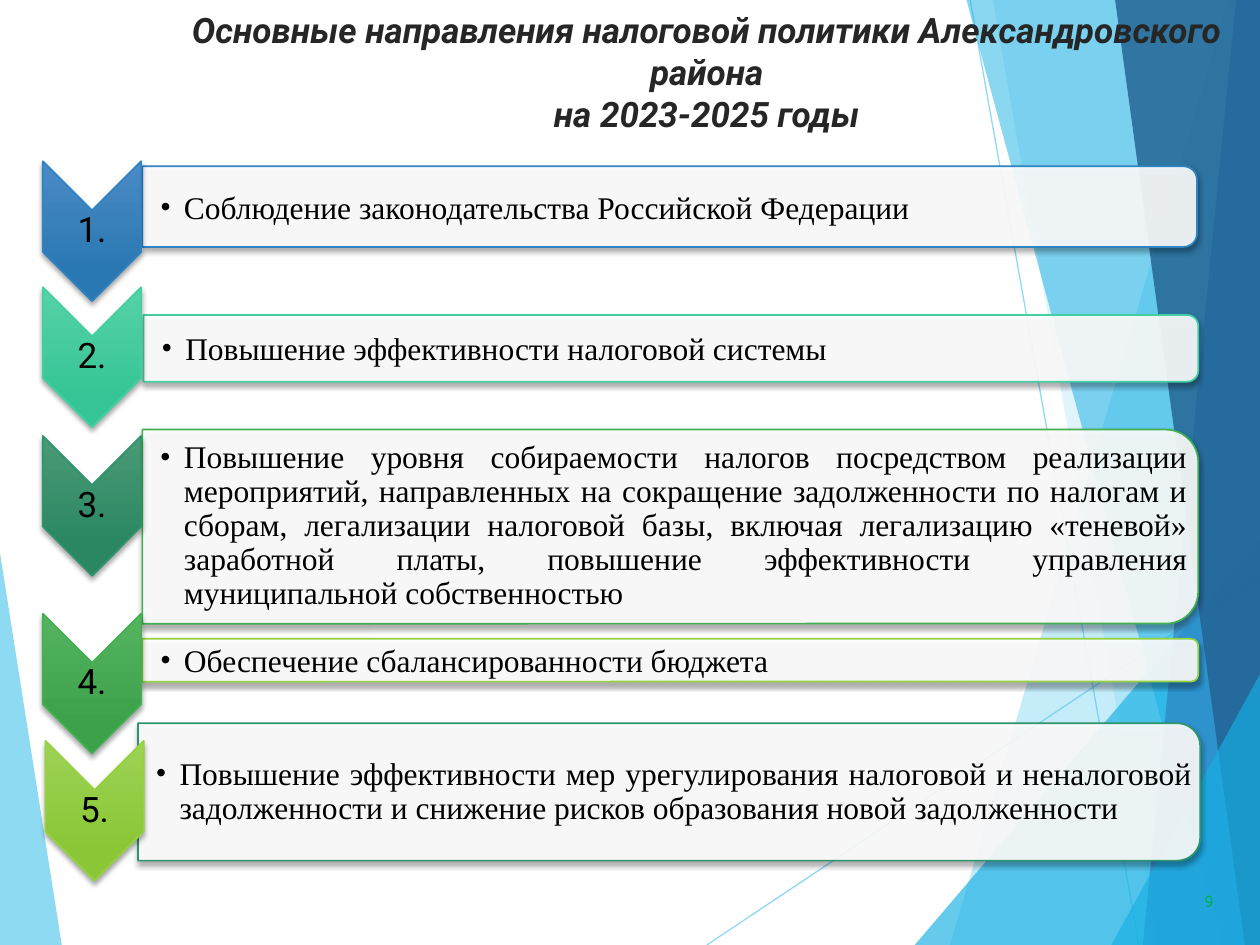
from dataclasses import dataclass
from typing import NamedTuple

from lxml import etree
from pptx import Presentation
from pptx.dml.color import RGBColor
from pptx.enum.shapes import MSO_CONNECTOR, MSO_SHAPE
from pptx.enum.text import MSO_ANCHOR, MSO_AUTO_SIZE, PP_ALIGN
from pptx.oxml.ns import qn
from pptx.util import Emu, Inches, Pt


class Tone(NamedTuple):
    edge: str
    light: str
    dark: str


class Style(NamedTuple):
    font: str
    size: int
    color: str
    emphasis: bool = False


@dataclass(frozen=True)
class Theme:
    # Type
    title: Style = Style("Roboto", 20, "262626", emphasis=True)
    number: Style = Style("Roboto", 20, "000000")
    direction: Style = Style("Times New Roman", 18, "000000")
    page: Style = Style("Roboto", 9, "00B050")
    # Backdrop
    sky: str = "5FCBEF"
    azure: str = "17B0E4"
    cobalt: str = "2E83C3"
    navy: str = "226292"
    # Cards and markers
    panel: str = "FFFFFF"
    shadow: str = "000000"
    blue: Tone = Tone("2E83C3", "4A8BC6", "2A78B2")
    mint: Tone = Tone("42D0A2", "56D2A7", "36C596")
    pine: Tone = Tone("2E946B", "4A9A76", "2A8762")
    green: Tone = Tone("42B051", "56B461", "3CA14A")
    lime: Tone = Tone("96D141", "9CD356", "8AC635")


class Box(NamedTuple):
    """Place and size in grid columns and rows."""
    col: float
    row: float
    cols: float
    rows: float


class Facet(NamedTuple):
    color: str
    opacity: int
    corners: tuple


class Ray(NamedTuple):
    start: tuple
    end: tuple


class Marker(NamedTuple):
    tone: Tone
    row: float
    col: float = 3.4


class Card(NamedTuple):
    tone: Tone
    box: Box
    text: str
    justified: bool = False


class Direction(NamedTuple):
    marker: Marker
    card: Card


THEME = Theme()
COLUMNS, ROWS = 100, 75
CELL = Inches(0.1)
MARKER_COLS, MARKER_ROWS = 7.8, 11.1
NOTCH_ROWS = MARKER_COLS / 2  # depth of the chevron's notch and tip
CORNER_INSET = 0.29 / 6  # share of a card's height that its round corners take
HANGING = Inches(0.19)
TITLE_INDENT = Inches(0.2)

FACETS = [
    Facet(THEME.sky, 70, ((0, 43.9), (4.9, 75), (0, 75))),
    Facet(THEME.sky, 36, ((97.5, 0), (75.4, 75), (100, 75), (100, 0))),
    Facet(THEME.sky, 20, ((78.8, 0), (91.9, 75), (100, 75), (100, 0))),
    Facet(THEME.azure, 66, ((72.6, 75), (100, 42.9), (100, 75))),
    Facet(THEME.azure, 50, ((76.7, 0), (97, 75), (100, 75), (100, 0))),
    Facet(THEME.cobalt, 70, ((98.1, 0), (90.7, 75), (100, 75), (100, 0))),
    Facet(THEME.navy, 82, ((88.5, 0), (98.8, 75), (100, 75), (100, 0))),
    Facet(THEME.azure, 66, ((88.2, 75), (100, 53.5), (100, 75))),
]
RAYS = [Ray((56.1, 75), (100, 45.7)), Ray((77, 0), (90.4, 75))]

TITLE = ("Основные направления налоговой политики Александровского района",
         "на 2023-2025 годы")

# In reading order; the place in the list gives the number
DIRECTIONS = [
    Direction(Marker(THEME.blue, 12.8),
              Card(THEME.blue, Box(11.3, 13.2, 83.7, 6.4),
                   "Соблюдение законодательства Российской Федерации")),
    Direction(Marker(THEME.mint, 22.8),
              Card(THEME.mint, Box(11.4, 25, 83.7, 5.3),
                   "Повышение эффективности налоговой системы")),
    Direction(Marker(THEME.pine, 34.6),
              Card(THEME.green, Box(11.3, 34.1, 83.8, 15.4),
                   "Повышение уровня собираемости налогов посредством реализации мероприятий, "
                   "направленных на сокращение задолженности по налогам и сборам, легализации "
                   "налоговой базы, включая легализацию «теневой» заработной платы, повышение "
                   "эффективности управления муниципальной собственностью", justified=True)),
    Direction(Marker(THEME.green, 48.7),
              Card(THEME.lime, Box(11.3, 50.7, 83.8, 3.4),
                   "Обеспечение сбалансированности бюджета")),
    Direction(Marker(THEME.lime, 58.8, col=3.6),
              Card(THEME.pine, Box(10.95, 57.4, 84.3, 10.9),
                   "Повышение эффективности мер урегулирования налоговой и неналоговой "
                   "задолженности и снижение рисков образования новой задолженности",
                   justified=True)),
]


def rgb(color: str) -> RGBColor:
    return RGBColor.from_string(color)


def grid(cells: float) -> Emu:
    return Emu(round(cells * CELL))


def place(box: Box) -> list:
    return [grid(cells) for cells in box]


def set_opacity(parent, percent: int) -> None:
    color = next(parent.iter(qn("a:srgbClr")))
    etree.SubElement(color, qn("a:alpha"), val=str(percent * 1000))


def add_shadow(shape) -> None:
    shape.shadow.inherit = False
    effects = shape.element.spPr.find(qn("a:effectLst"))
    shadow = etree.SubElement(effects, qn("a:outerShdw"), blurRad=str(Pt(3)), dist=str(Pt(2)),
                              dir="5400000", rotWithShape="0")
    etree.SubElement(shadow, qn("a:srgbClr"), val=THEME.shadow)
    set_opacity(shadow, 35)


def add_run(paragraph, text: str, style: Style) -> None:
    run = paragraph.add_run()
    run.text = text
    run.font.name, run.font.size = style.font, Pt(style.size)
    run.font.color.rgb = rgb(style.color)
    run.font.bold = run.font.italic = style.emphasis


def add_label(shapes, box: Box, text: str, style: Style, align: PP_ALIGN, margins: tuple):
    label = shapes.add_textbox(*place(box))
    frame = label.text_frame
    frame.word_wrap, frame.vertical_anchor = True, MSO_ANCHOR.MIDDLE
    frame.margin_left, frame.margin_top, frame.margin_right, frame.margin_bottom = map(Inches, margins)
    frame.paragraphs[0].alignment = align
    add_run(frame.paragraphs[0], text, style)
    return label


def add_turned(shapes, preset: MSO_SHAPE, box: Box, edge: str):
    """Add a preset turned a quarter clockwise so that it covers the box."""
    col, row, cols, rows = box
    shift = (cols - rows) / 2
    shape = shapes.add_shape(preset, *place(Box(col + shift, row - shift, rows, cols)))
    shape.rotation = 90
    shape.line.color.rgb, shape.line.width = rgb(edge), Pt(1)
    add_shadow(shape)
    return shape


def draw_facet(shapes, facet: Facet) -> None:
    first, *others = [(grid(col), grid(row)) for col, row in facet.corners]
    builder = shapes.build_freeform(*first)
    builder.add_line_segments(others, close=True)
    shape = builder.convert_to_shape()
    shape.shadow.inherit = False
    shape.fill.solid()
    shape.fill.fore_color.rgb = rgb(facet.color)
    set_opacity(shape.element.spPr, facet.opacity)
    shape.line.fill.background()


def draw_ray(shapes, ray: Ray) -> None:
    connector = shapes.add_connector(MSO_CONNECTOR.STRAIGHT, *map(grid, ray.start + ray.end))
    connector.line.color.rgb, connector.line.width = rgb(THEME.sky), Pt(0.75)
    set_opacity(connector.element.spPr, 70)
    etree.SubElement(connector.element.spPr, qn("a:effectLst"))


def draw_title(shapes) -> None:
    title = shapes.title
    shapes.element.append(title.element)  # bring in front of the backdrop
    title.left, title.top, title.width, title.height = place(Box(11.4, 1.2, 87.4, 9))
    frame = title.text_frame
    frame.auto_size, frame.vertical_anchor = MSO_AUTO_SIZE.NONE, MSO_ANCHOR.MIDDLE
    frame.add_paragraph()
    for paragraph, text in zip(frame.paragraphs, TITLE):
        paragraph.alignment = PP_ALIGN.CENTER
        add_run(paragraph, text, THEME.title)
    for properties in title.element.iter(qn("a:pPr")):
        properties.set("marL", str(TITLE_INDENT))


def draw_card(shapes, card: Card) -> None:
    panel = add_turned(shapes, MSO_SHAPE.ROUND_2_SAME_RECTANGLE, card.box, card.tone.edge)
    panel.fill.solid()
    panel.fill.fore_color.rgb = rgb(THEME.panel)
    set_opacity(panel.element.spPr.find(qn("a:solidFill")), 90)

    # Bulleted text, kept clear of the round corners on the right
    col, row, cols, rows = card.box
    inset = rows * CORNER_INSET
    label = add_label(shapes, Box(col, row + inset, cols - inset, rows - 2 * inset), card.text,
                      THEME.direction, PP_ALIGN.JUSTIFY if card.justified else PP_ALIGN.LEFT,
                      (0.14, 0.01, 0.01, 0.01))
    paragraph = label.text_frame.paragraphs[0]
    paragraph.level, paragraph.line_spacing = 1, 0.9 if card.justified else 1.0
    properties = next(label.element.iter(qn("a:pPr")))
    properties.set("marL", str(HANGING))
    properties.set("indent", str(-HANGING))
    etree.SubElement(properties, qn("a:buFont"), typeface=THEME.direction.font)
    etree.SubElement(properties, qn("a:buChar"), char="•")


def draw_marker(shapes, marker: Marker, number: int) -> None:
    tone, row, col = marker
    chevron = add_turned(shapes, MSO_SHAPE.CHEVRON, Box(col, row, MARKER_COLS, MARKER_ROWS), tone.edge)
    chevron.fill.gradient()
    chevron.fill.gradient_angle = 270
    chevron.element.spPr.find(qn("a:gradFill")).set("rotWithShape", "0")
    for stop, color, position in zip(chevron.fill.gradient_stops, (tone.light, tone.dark), (0, 0.78)):
        stop.color.rgb, stop.position = rgb(color), position
    body = Box(col, row + NOTCH_ROWS, MARKER_COLS, MARKER_ROWS - 2 * NOTCH_ROWS)
    label = add_label(shapes, body, f"{number}.", THEME.number, PP_ALIGN.CENTER, (0.01,) * 4)
    label.text_frame.paragraphs[0].line_spacing = 0.9


def main() -> None:
    deck = Presentation()
    deck.slide_width, deck.slide_height = grid(COLUMNS), grid(ROWS)
    shapes = deck.slides.add_slide(deck.slide_layouts[5]).shapes

    # Backdrop: the left facet and the rays lie behind the right facets
    draw_facet(shapes, FACETS[0])
    for ray in RAYS:
        draw_ray(shapes, ray)
    for facet in FACETS[1:]:
        draw_facet(shapes, facet)

    # Heading
    draw_title(shapes)

    # Numbered directions: each marker overlaps its card
    for number, direction in enumerate(DIRECTIONS, start=1):
        draw_card(shapes, direction.card)
        draw_marker(shapes, direction.marker, number)

    # Page number
    add_label(shapes, Box(77.3, 69.5, 20, 4), "9", THEME.page, PP_ALIGN.RIGHT, (0.1, 0.05, 0.1, 0.05))

    deck.save("out.pptx")


if __name__ == "__main__":
    main()
